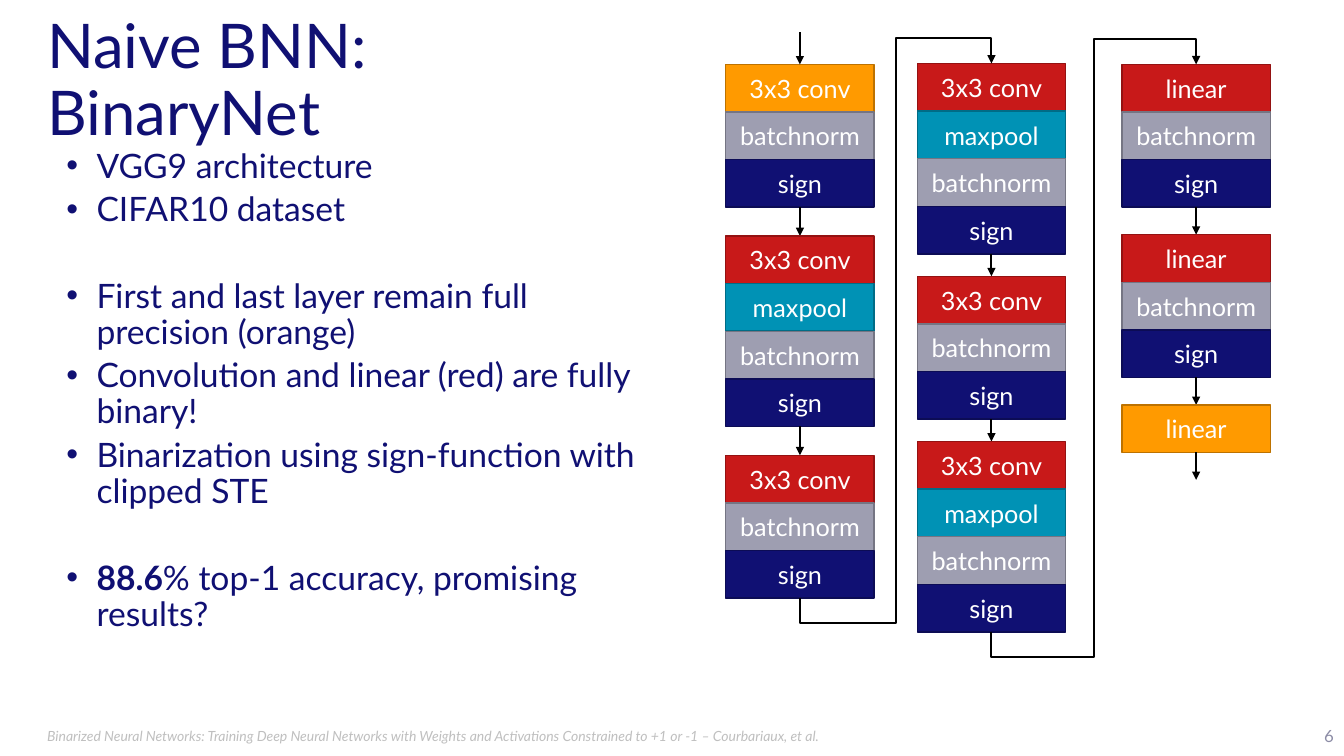
from lxml.etree import SubElement
from pptx import Presentation
from pptx.dml.color import RGBColor
from pptx.enum.shapes import MSO_CONNECTOR, MSO_SHAPE
from pptx.enum.text import MSO_ANCHOR, PP_ALIGN
from pptx.oxml.ns import qn
from pptx.util import Pt

FONT = "Lato"
NAVY = RGBColor(0x10, 0x10, 0x73)
BLACK = RGBColor(0, 0, 0)
WHITE = RGBColor(0xFF, 0xFF, 0xFF)
FOOTER_GREY = RGBColor(0xBF, 0xBF, 0xBF)
NUMBER_GREY = RGBColor(0x8C, 0x8C, 0xA6)

# Fill and outline of each kind of layer
ORANGE = (RGBColor(0xFF, 0x9A, 0x00), RGBColor(0xBD, 0x72, 0x00))
RED = (RGBColor(0xC8, 0x19, 0x19), RGBColor(0x94, 0x12, 0x12))
TEAL = (RGBColor(0x00, 0x92, 0xB5), RGBColor(0x00, 0x6C, 0x86))
GREY = (RGBColor(0x9E, 0x9E, 0xB1), RGBColor(0x75, 0x75, 0x83))
DARK = (NAVY, RGBColor(0x0C, 0x0C, 0x55))

TITLE = "Naive BNN: BinaryNet"
FOOTER = ("Binarized Neural Networks: Training Deep Neural Networks with Weights and "
          "Activations Constrained to +1 or -1 – Courbariaux, et al.")
PAGE_NUMBER = "6"

# Space before in points, then runs as (text, bold)
BULLETS = [
    (5, [("VGG9 architecture", False)]),
    (5, [("CIFAR10 dataset", False)]),
    (36, [("First and last layer remain full precision (orange)", False)]),
    (5, [("Convolution and linear (red) are fully binary!", False)]),
    (5, [("Binarization using sign-function with clipped STE", False)]),
    (36, [("88.6", True), ("% top-1 accuracy, promising results?", False)]),
]

MAXPOOL = ("maxpool", TEAL)
NORM_SIGN = [("batchnorm", GREY), ("sign", DARK)]
FIRST_CONV = [("3x3 conv", ORANGE)] + NORM_SIGN
CONV = [("3x3 conv", RED)] + NORM_SIGN
POOL_CONV = [("3x3 conv", RED), MAXPOOL] + NORM_SIGN
LINEAR = [("linear", RED)] + NORM_SIGN
LAST_LINEAR = [("linear", ORANGE)]

# Left, top, gap between stacks, stacks
COLUMNS = [
    (518.4, 46, 20.6, [FIRST_CONV, POOL_CONV, CONV]),
    (655.2, 45.4, 16, [POOL_CONV, CONV, POOL_CONV]),
    (801.4, 46, 19.6, [LINEAR, LINEAR, LAST_LINEAR]),
]
LAYER_WIDTH, LAYER_HEIGHT = 106, 34
ENTRY_LENGTH = 23
DETOUR = 18


def add_span(para, text, size, color, bold=False, italic=False):
    span = para.add_run()
    span.text = text
    font = span.font
    font.name, font.size, font.bold, font.italic = FONT, Pt(size), bold, italic
    font.color.rgb = color


def add_text_box(page, left, top, width, height, anchor):
    box = page.shapes.add_textbox(Pt(left), Pt(top), Pt(width), Pt(height))
    box.text_frame.word_wrap = True
    box.text_frame.vertical_anchor = anchor
    return box.text_frame


def add_bullets(page):
    frame = add_text_box(page, 26.6, 103, 442, 393.8, MSO_ANCHOR.TOP)
    for index, (space, spans) in enumerate(BULLETS):
        para = frame.add_paragraph() if index else frame.paragraphs[0]
        para.line_spacing = 0.9
        para.space_before = Pt(space)
        properties = para._p.get_or_add_pPr()
        properties.set("marL", str(Pt(35.3)))
        properties.set("indent", str(Pt(-21.6)))
        SubElement(properties, qn("a:buFont"), typeface="Arial")
        SubElement(properties, qn("a:buChar"), char="•")
        for text, bold in spans:
            add_span(para, text, 24, NAVY, bold)


def add_layer(shapes, left, top, label, colors):
    layer = shapes.add_shape(MSO_SHAPE.RECTANGLE, Pt(left), Pt(top),
                             Pt(LAYER_WIDTH), Pt(LAYER_HEIGHT))
    layer.shadow.inherit = False
    layer.fill.solid()
    layer.fill.fore_color.rgb, layer.line.color.rgb = colors
    layer.line.width = Pt(1)
    frame = layer.text_frame
    frame.word_wrap = True
    frame.vertical_anchor = MSO_ANCHOR.MIDDLE
    para = frame.paragraphs[0]
    para.alignment = PP_ALIGN.CENTER
    add_span(para, label, 18, WHITE)


def add_arrow(page, x1, y1, x2, y2, kind=MSO_CONNECTOR.STRAIGHT):
    arrow = page.shapes.add_connector(kind, Pt(x1), Pt(y1), Pt(x2), Pt(y2))
    arrow.line.color.rgb = BLACK
    arrow.line.width = Pt(1.5)
    SubElement(arrow.line._get_or_add_ln(), qn("a:tailEnd"), type="triangle")
    SubElement(arrow._element.spPr, qn("a:effectLst"))
    return arrow


def add_detour_arrow(page, x1, y1, x2, y2):
    """Lead from the foot of one column up to the head of the next one."""
    middle_x, middle_y = (x1 + x2) / 2, (y1 + y2) / 2
    rise, run = y1 - y2, x2 - x1
    # A five-part connector turned by 90 degrees, so rise and run swap places
    arrow = add_arrow(page, middle_x + rise / 2, middle_y + run / 2,
                      middle_x - rise / 2, middle_y - run / 2, MSO_CONNECTOR.ELBOW)
    properties = arrow._element.spPr
    properties.find(qn("a:xfrm")).set("rot", "5400000")
    geometry = properties.find(qn("a:prstGeom"))
    geometry.set("prst", "bentConnector5")
    guides = geometry.find(qn("a:avLst"))
    overshoot = DETOUR / rise
    for number, share in enumerate((-overshoot, 0.5, 1 + overshoot), 1):
        SubElement(guides, qn("a:gd"), name=f"adj{number}",
                   fmla=f"val {round(share * 100000)}")


def add_column(page, left, top, gap, stacks):
    """Draw the stacks with arrows between them; return the column's head and foot."""
    center = left + LAYER_WIDTH / 2
    y = top
    for index, stack in enumerate(stacks):
        if index:
            add_arrow(page, center, y, center, y + gap)
            y += gap
        shapes = page.shapes.add_group_shape().shapes if len(stack) > 1 else page.shapes
        for label, colors in stack:
            add_layer(shapes, left, y, label, colors)
            y += LAYER_HEIGHT
    return (center, top), (center, y)


def add_network(page):
    ends = [add_column(page, *column) for column in COLUMNS]
    for (_, foot), (head, _) in zip(ends, ends[1:]):
        add_detour_arrow(page, *foot, *head)
    entry_x, entry_y = ends[0][0]
    add_arrow(page, entry_x, entry_y - ENTRY_LENGTH, entry_x, entry_y)
    exit_x, exit_y = ends[-1][1]
    add_arrow(page, exit_x, exit_y, exit_x, exit_y + COLUMNS[-1][2])


def main():
    deck = Presentation()
    deck.slide_width, deck.slide_height = Pt(960), Pt(540)
    page = deck.slides.add_slide(deck.slide_layouts[6])

    footer = add_text_box(page, 26.6, 511.2, 884.2, 28.8, MSO_ANCHOR.MIDDLE)
    add_span(footer.paragraphs[0], FOOTER, 10, FOOTER_GREY, italic=True)
    number = add_text_box(page, 910.8, 511.2, 49, 28.8, MSO_ANCHOR.MIDDLE)
    number.paragraphs[0].alignment = PP_ALIGN.RIGHT
    add_span(number.paragraphs[0], PAGE_NUMBER, 12, NUMBER_GREY)

    add_bullets(page)
    title = add_text_box(page, 26.6, 28.8, 442, 59.8, MSO_ANCHOR.MIDDLE)
    title.margin_right = Pt(36)
    title.paragraphs[0].line_spacing = 0.9
    add_span(title.paragraphs[0], TITLE, 44, NAVY)

    add_network(page)
    deck.save("out.pptx")


if __name__ == "__main__":
    main()
